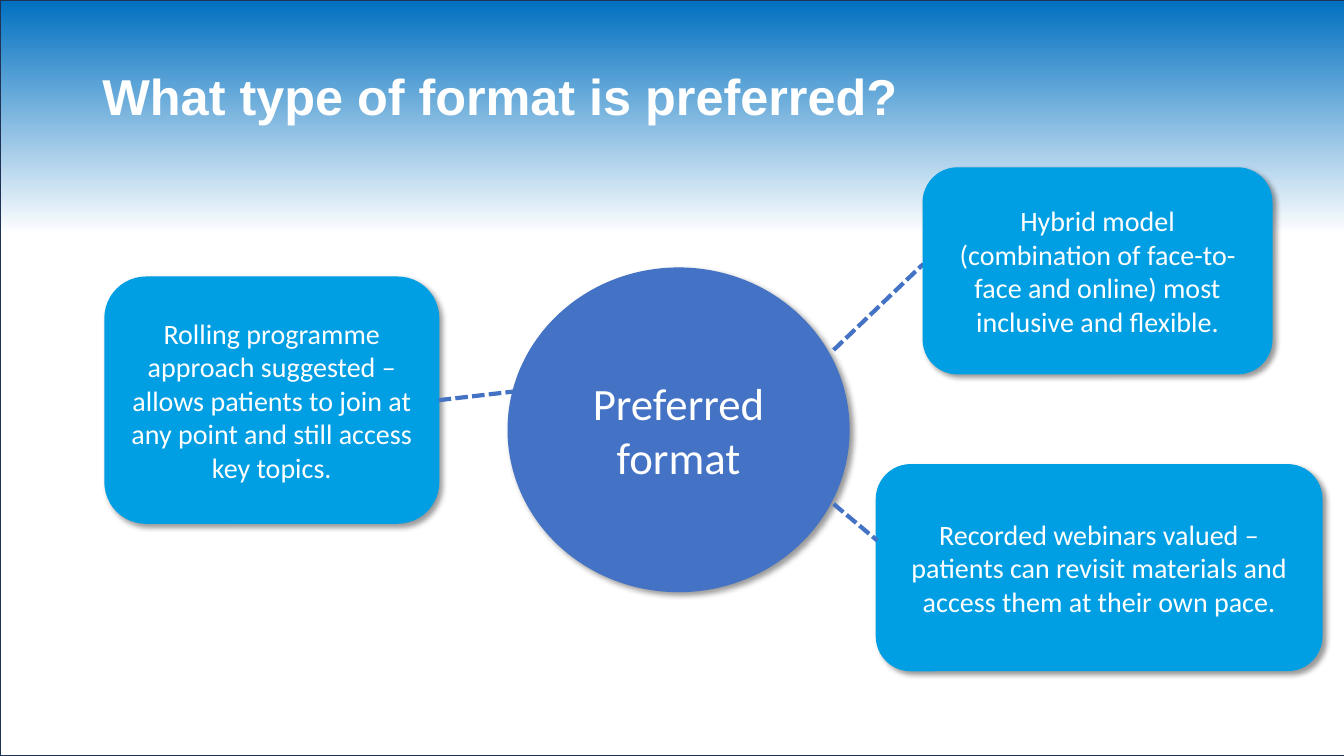
from lxml.etree import SubElement
from pptx import Presentation
from pptx.dml.color import RGBColor
from pptx.enum.dml import MSO_LINE
from pptx.enum.shapes import MSO_CONNECTOR, MSO_SHAPE
from pptx.enum.text import MSO_ANCHOR, PP_ALIGN
from pptx.oxml.ns import qn
from pptx.util import Pt

COLORS = {
    "sky": "0070C0",
    "white": "FFFFFF",
    "border": "1E3256",
    "hub": "4472C4",
    "card": "009FE3",
    "shadow": "000000",
}


def color(name):
    """Return the named colour."""
    return RGBColor.from_string(COLORS[name])


def format_text(paragraph, font_name, size, bold=False):
    """Set white type on every run of a paragraph."""
    for run in paragraph.runs:
        run.font.name = font_name
        run.font.size = Pt(size)
        run.font.bold = bold
        run.font.color.rgb = color("white")


def add_backdrop(slide, left, top, width, height):
    """Fill the box with a gradient fading from blue to white."""
    shape = slide.shapes.add_shape(
        MSO_SHAPE.RECTANGLE, Pt(left), Pt(top), Pt(width), Pt(height))
    shape.shadow.inherit = False
    shape.fill.gradient()
    shape.fill.gradient_angle = 270
    stops = shape.fill.gradient_stops
    for stop, position, name in zip(stops, (0, 0.31), ("sky", "white")):
        stop.position = position
        stop.color.rgb = color(name)
    shape.line.color.rgb = color("border")
    shape.line.width = Pt(1)


def add_title(slide, left, top, width, height, text):
    """Place the title placeholder in the box."""
    title = slide.shapes.title
    title.left, title.top = Pt(left), Pt(top)
    title.width, title.height = Pt(width), Pt(height)
    title.text_frame.text = text
    title.text_frame.vertical_anchor = MSO_ANCHOR.MIDDLE
    paragraph = title.text_frame.paragraphs[0]
    paragraph.alignment = PP_ALIGN.LEFT
    paragraph.line_spacing = 0.9
    format_text(paragraph, "Arial", 36, True)
    slide.shapes._spTree.append(title._element)


def add_shadow(shape):
    """Give a shape a soft shadow towards the lower right."""
    shape.shadow.inherit = False
    effects = shape._element.spPr.find(qn("a:effectLst"))
    outer = SubElement(effects, qn("a:outerShdw"), blurRad=str(Pt(4)),
                       dist=str(Pt(3)), dir="2700000", algn="tl",
                       rotWithShape="0")
    tint = SubElement(outer, qn("a:srgbClr"), val=COLORS["shadow"])
    SubElement(tint, qn("a:alpha"), val="40000")


def add_bubble(slide, kind, left, top, width, height, text, fill, size):
    """Draw a filled shape with centred text in the box."""
    shape = slide.shapes.add_shape(
        kind, Pt(left), Pt(top), Pt(width), Pt(height))
    shape.fill.solid()
    shape.fill.fore_color.rgb = color(fill)
    shape.line.color.rgb = color(fill)
    shape.line.width = Pt(1)
    add_shadow(shape)
    text_frame = shape.text_frame
    text_frame.word_wrap = True
    text_frame.vertical_anchor = MSO_ANCHOR.MIDDLE
    text_frame.text = text
    paragraph = text_frame.paragraphs[0]
    paragraph.alignment = PP_ALIGN.CENTER
    format_text(paragraph, "Calibri", size)
    return shape


def add_link(slide, start_x, start_y, end_x, end_y):
    """Draw a dashed line between two points."""
    link = slide.shapes.add_connector(
        MSO_CONNECTOR.STRAIGHT, Pt(start_x), Pt(start_y), Pt(end_x), Pt(end_y))
    link.line.color.rgb = color("hub")
    link.line.width = Pt(3)
    link.line.dash_style = MSO_LINE.SQUARE_DOT
    SubElement(link._element.spPr, qn("a:effectLst"))
    return link


def add_format_map(slide, left, top):
    """Draw the hub and its three linked cards from a top left corner."""
    def add_card(x, y, width, height, text):
        """Draw a card offset from the corner of the map."""
        return add_bubble(slide, MSO_SHAPE.ROUNDED_RECTANGLE, left + x, top + y,
                          width, height, text, "card", 20)

    add_bubble(slide, MSO_SHAPE.OVAL, left + 288, top + 71.5, 243.4, 231,
               "Preferred format", "hub", 32)
    rolling = add_card(
        0, 78, 238.3, 175.7,
        "Rolling programme approach suggested – allows patients to join at "
        "any point and still access key topics.")
    add_card(
        551, 212, 318.2, 147,
        "Recorded webinars valued – patients can revisit materials and "
        "access them at their own pace.")
    links = [
        add_link(slide, left + start_x, top + start_y, left + end_x, top + end_y)
        for start_x, start_y, end_x, end_y in (
            (238.3, 165.9, 350, 153),
            (520.5, 130, 584.5, 68.6),
            (520.5, 240, 551.5, 266),
        )
    ]
    links[0].begin_connect(rolling, 3)
    add_card(
        584.5, 0, 249, 147,
        "Hybrid model (combination of face-to-face and online) most "
        "inclusive and flexible.")


def main():
    """Build and save the presentation."""
    presentation = Presentation()
    presentation.slide_width = Pt(960)
    presentation.slide_height = Pt(540)
    slide = presentation.slides.add_slide(presentation.slide_layouts[5])
    add_backdrop(slide, 0, 0, 985.7, 540)
    add_title(slide, 66, 18.7, 828, 104.4, "What type of format is preferred?")
    add_format_map(slide, 75, 120)
    presentation.save("out.pptx")


if __name__ == "__main__":
    main()
